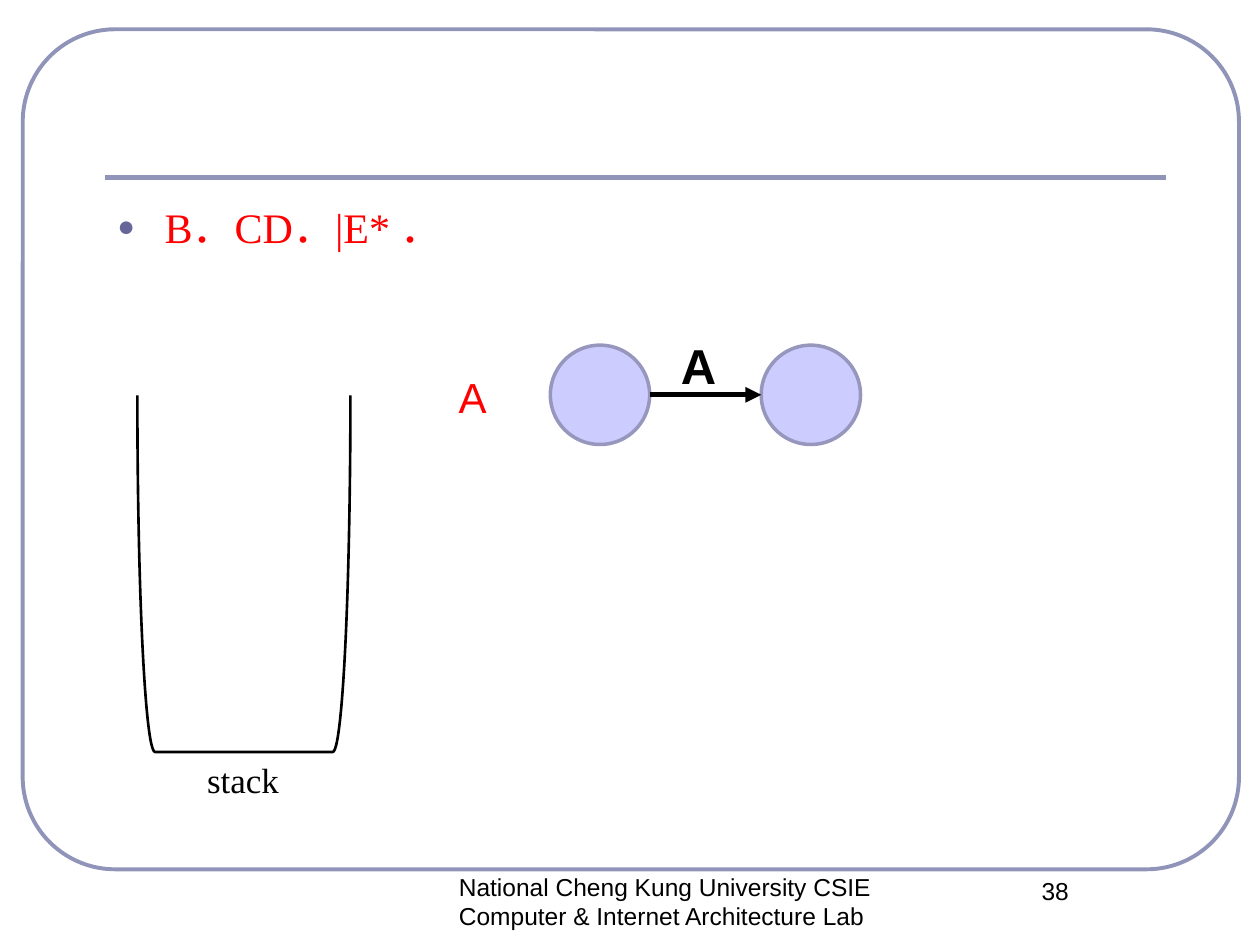
from lxml import etree
from pptx import Presentation
from pptx.dml.color import RGBColor
from pptx.enum import shapes as kinds, text as txt
from pptx.oxml import ns
from pptx.util import Pt


def rgb(value):
    """Return the colour for a hex string."""
    return RGBColor.from_string(value)


def add_xml(parent, tag, **attributes):
    """Append a DrawingML element to a parent."""
    return etree.SubElement(parent, ns.qn(tag), attributes)


def add_outline(slide, preset, box, color, width, fill=None):
    """Add an outlined preset shape, filled only when a fill is given."""
    outline = slide.shapes.add_shape(preset, *map(Pt, box))
    outline.shadow.inherit = False
    if fill:
        outline.fill.solid()
        outline.fill.fore_color.rgb = rgb(fill)
    else:
        outline.fill.background()
    outline.line.color.rgb = rgb(color)
    outline.line.width = Pt(width)
    return outline


def add_rule(slide, start, end, color, arrow=False):
    """Add a straight line, with an arrowhead at its end if asked."""
    rule = slide.shapes.add_connector(
        kinds.MSO_CONNECTOR.STRAIGHT, *map(Pt, (*start, *end)))
    rule.line.color.rgb = rgb(color)
    rule.line.width = Pt(3)
    if arrow:
        add_xml(rule.line._get_or_add_ln(), "a:tailEnd", type="triangle")
    add_xml(rule._element.spPr, "a:effectLst")


def add_label(slide, words, box, size, font="Arial", color="000000",
              bold=False, wrap=True, align=txt.PP_ALIGN.LEFT):
    """Add a one-paragraph text box and return its paragraph."""
    frame = slide.shapes.add_textbox(*map(Pt, box)).text_frame
    frame.word_wrap = wrap
    label = frame.paragraphs[0]
    label.text = words
    label.alignment = align
    label.font.name = font
    label.font.size = Pt(size)
    label.font.bold = bold
    label.font.color.rgb = rgb(color)
    return label


def add_bullet(paragraph, color, indent):
    """Give a paragraph a round hanging bullet."""
    paragraph.space_before = Pt(4.8)
    props = paragraph._p.get_or_add_pPr()
    props.set("marL", str(Pt(indent)))
    props.set("indent", str(-Pt(indent)))
    bullet_color = add_xml(props, "a:buClr")
    add_xml(bullet_color, "a:srgbClr", val=color)
    add_xml(props, "a:buSzPct", val="70000")
    add_xml(props, "a:buFont", typeface="Arial")
    add_xml(props, "a:buChar", char="●")
    defaults = props.find(ns.qn("a:defRPr"))
    if defaults is not None:
        props.append(defaults)


def add_frame(slide):
    """Draw the rounded border and the heading rule."""
    border = add_outline(slide, kinds.MSO_SHAPE.ROUNDED_RECTANGLE,
                         (13, 16.75, 695, 480), "9094B8", 2.25)
    border.adjustments[0] = 0.11
    add_rule(slide, (60, 101.5), (666, 101.5), "9094B8")


def add_footer(slide):
    """Write the department and the page number."""
    center = txt.PP_ALIGN.CENTER
    add_label(slide, "National Cheng Kung University CSIE "
              "Computer & Internet Architecture Lab ",
              (224, 494.5, 312, 36), 14, align=center)
    add_label(slide, "38", (540, 497, 126, 36), 14, align=center)


def add_stack(slide):
    """Draw the open stack and its caption."""
    stack = add_outline(slide, kinds.MSO_SHAPE.RIGHT_BRACKET,
                        (37.5, 267, 203.75, 121.75), "000000", 1.5)
    stack.rotation = 90
    add_label(slide, "stack", (111.25, 430, 56, 31.5), 20,
              "Times New Roman", wrap=False)


def add_automaton(slide):
    """Draw two states joined by a labelled transition."""
    size, top, lefts = 56.75, 197.25, (314.5, 435)
    add_label(slide, "A", (255, 209, 31, 36), 24, color="FF0000", wrap=False)
    for left in lefts:
        add_outline(slide, kinds.MSO_SHAPE.OVAL, (left, top, size, size),
                    "9797BD", 2, "CCCCFF")
    middle = top + size / 2
    add_rule(slide, (lefts[0] + size, middle), (lefts[1], middle),
             "000000", arrow=True)
    add_label(slide, "A", (382, 188, 35.5, 41), 28, bold=True)


def main():
    """Build and save the slide."""
    deck = Presentation()
    deck.slide_width, deck.slide_height = Pt(720), Pt(540)
    slide = deck.slides.add_slide(deck.slide_layouts[6])
    add_frame(slide)
    expression = add_label(slide, "B．CD．|E* ．", (60, 111.5, 606, 356.5), 24,
                           "Times New Roman", "FF0000")
    add_bullet(expression, "666699", 27)
    add_footer(slide)
    add_stack(slide)
    add_automaton(slide)
    deck.save("out.pptx")


if __name__ == "__main__":
    main()
